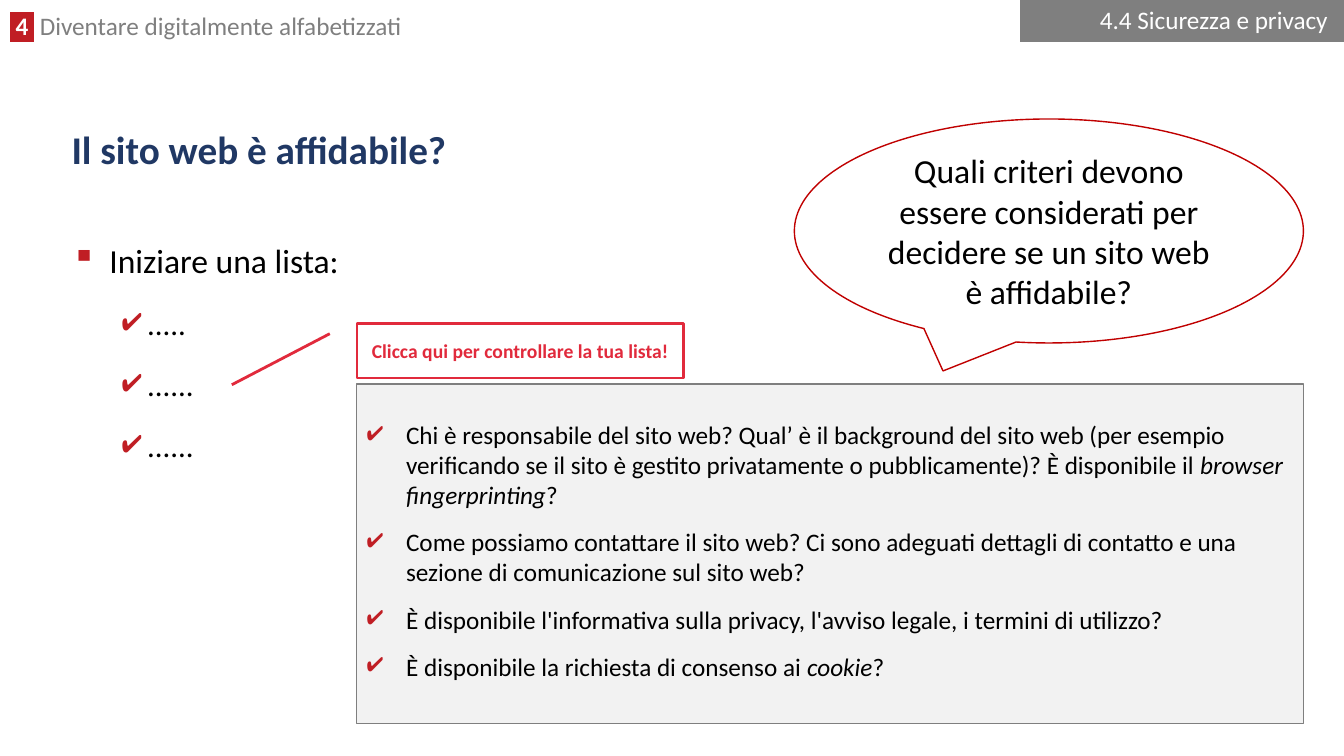
from lxml import etree
from pptx import Presentation
from pptx import util as u
from pptx.dml.color import RGBColor
from pptx.enum import shapes, text
from pptx.oxml.ns import qn

WHITE, BLACK, GREY, PALE = "FFFFFF", "000000", "7F7F7F", "F2F2F2"
RED, DARK_RED, BRIGHT_RED, NAVY = "C01E24", "C00000", "E12A3C", "203864"
LEFT, MIDDLE = text.PP_ALIGN.LEFT, text.MSO_ANCHOR.MIDDLE
CENTER, RIGHT = text.PP_ALIGN.CENTER, text.PP_ALIGN.RIGHT


def color(value):
    return RGBColor.from_string(value)


class SlideBuilder:
    def __init__(self, slide, font="Calibri"):
        self.slide = slide
        self.font = font

    def text_box(self, left, top, width, height, anchor=text.MSO_ANCHOR.TOP):
        """Add a wrapping text box and return its text frame."""
        box = self.slide.shapes.add_textbox(*map(u.Pt, (left, top, width, height)))
        return self.prepare(box.text_frame, anchor)

    def shape(self, kind, left, top, width, height, fill, line=None, weight=1,
              adjustments=(), anchor=MIDDLE):
        """Add a preset shape and return its text frame."""
        shape = self.slide.shapes.add_shape(kind, *map(u.Pt, (left, top, width, height)))
        shape.shadow.inherit = False
        shape.fill.solid()
        shape.fill.fore_color.rgb = color(fill)
        if line:
            shape.line.color.rgb = color(line)
            shape.line.width = u.Pt(weight)
        else:
            shape.line.fill.background()
        for index, value in enumerate(adjustments):
            shape.adjustments[index] = value
        return self.prepare(shape.text_frame, anchor)

    def prepare(self, frame, anchor):
        frame.word_wrap = True
        frame.vertical_anchor = anchor
        return frame

    def paragraph(self, frame, runs, size, ink=BLACK, bold=False, align=LEFT,
                  spacing=1.0, before=0, after=0, bullet=None, indent=0, hanging=0):
        """Fill the empty first paragraph or add one; runs are (words, overrides)."""
        paragraph = frame.paragraphs[0]
        if paragraph.runs:
            paragraph = frame.add_paragraph()
            paragraph.space_before = u.Pt(before)
        paragraph.alignment = align
        paragraph.line_spacing = spacing
        paragraph.space_after = u.Pt(after)
        if bullet:
            self.bullet(paragraph, bullet, indent, hanging)
        for words, overrides in runs:
            self.run(paragraph, words, **{"size": size, "ink": ink, "bold": bold, **overrides})

    def bullet(self, paragraph, mark, indent, hanging):
        properties = paragraph._p.get_or_add_pPr()
        properties.set("marL", str(u.Pt(indent)))
        properties.set("indent", str(-u.Pt(hanging)))
        bullet_color = etree.SubElement(properties, qn("a:buClr"))
        etree.SubElement(bullet_color, qn("a:srgbClr"), val=RED)
        etree.SubElement(properties, qn("a:buChar"), char=mark)

    def run(self, paragraph, words, size, ink, bold, italic=False, highlight=None):
        run = paragraph.add_run()
        run.text = words
        run.font.size = u.Pt(size)
        run.font.bold = bold
        run.font.italic = italic
        run.font.color.rgb = color(ink)
        if highlight:
            marker = etree.SubElement(run.font._element, qn("a:highlight"))
            etree.SubElement(marker, qn("a:srgbClr"), val=highlight)
        run.font.name = self.font


def main():
    presentation = Presentation()
    presentation.slide_width, presentation.slide_height = u.Pt(960), u.Pt(540)
    builder = SlideBuilder(presentation.slides.add_slide(presentation.slide_layouts[6]))
    preset = shapes.MSO_SHAPE

    header = builder.text_box(0, 8, 685, 24.5)
    builder.paragraph(header, [
        (" 4 ", {"ink": WHITE, "bold": True, "highlight": RED}),
        (" Diventare digitalmente alfabetizzati", {}),
    ], 18, GREY, spacing=0.8)

    title = builder.text_box(44, 85, 871, 47.5, MIDDLE)
    builder.paragraph(title, [("Il sito web è affidabile?", {})], 28, NAVY, True, spacing=0.9)

    section = builder.shape(preset.RECTANGLE, 728.6, 0, 231.4, 30, GREY)
    section.margin_right = u.Pt(11.5)
    builder.paragraph(section, [("4.4 Sicurezza e privacy", {})], 18, WHITE,
                      align=RIGHT, spacing=0.9)

    own_list = builder.text_box(44, 162, 572, 338)
    builder.paragraph(own_list, [("Iniziare una lista:", {})], 24, spacing=1.2,
                      bullet="▪", indent=27, hanging=27)
    for dots in (".....", "......", "......"):
        builder.paragraph(own_list, [(dots, {})], 22, spacing=1.2, before=12,
                          bullet="✔", indent=54, hanging=18)

    question = builder.shape(preset.OVAL_CALLOUT, 567.4, 85, 363.6, 160, WHITE, DARK_RED,
                             adjustments=(-0.208, 0.625))
    builder.paragraph(question, [
        ("Quali criteri devono essere considerati per decidere se un sito web è affidabile?", {}),
    ], 24, align=CENTER)

    criteria = builder.shape(preset.RECTANGLE, 255, 274.3, 676, 242.6, PALE, GREY, 0.75,
                             anchor=text.MSO_ANCHOR.TOP)
    criteria.margin_top = u.Pt(25)
    italic = {"italic": True}
    for runs in (
        [("Chi è responsabile del sito web? Qual’ è il background del sito web (per esempio "
          "verificando se il sito è gestito privatamente o pubblicamente)? "
          "È disponibile il ", {}), ("browser fingerprinting", italic), ("?", {})],
        [("Come possiamo contattare il sito web? Ci sono adeguati dettagli di contatto e una "
          "sezione di comunicazione sul sito web?", {})],
        [("È disponibile l'informativa sulla privacy, l'avviso legale, "
          "i termini di utilizzo?", {})],
        [("È disponibile la richiesta di consenso ai ", {}), ("cookie", italic), ("?", {})],
    ):
        builder.paragraph(criteria, runs, 18, before=6, after=6,
                          bullet="✔", indent=28, hanging=28)

    prompt = builder.shape(preset.LINE_CALLOUT_1, 255, 231.1, 233.3, 38.9, WHITE, BRIGHT_RED, 2)
    builder.paragraph(prompt, [("Clicca qui per controllare la tua lista!", {})],
                      14, BRIGHT_RED, True, CENTER)

    presentation.save("out.pptx")


if __name__ == "__main__":
    main()
